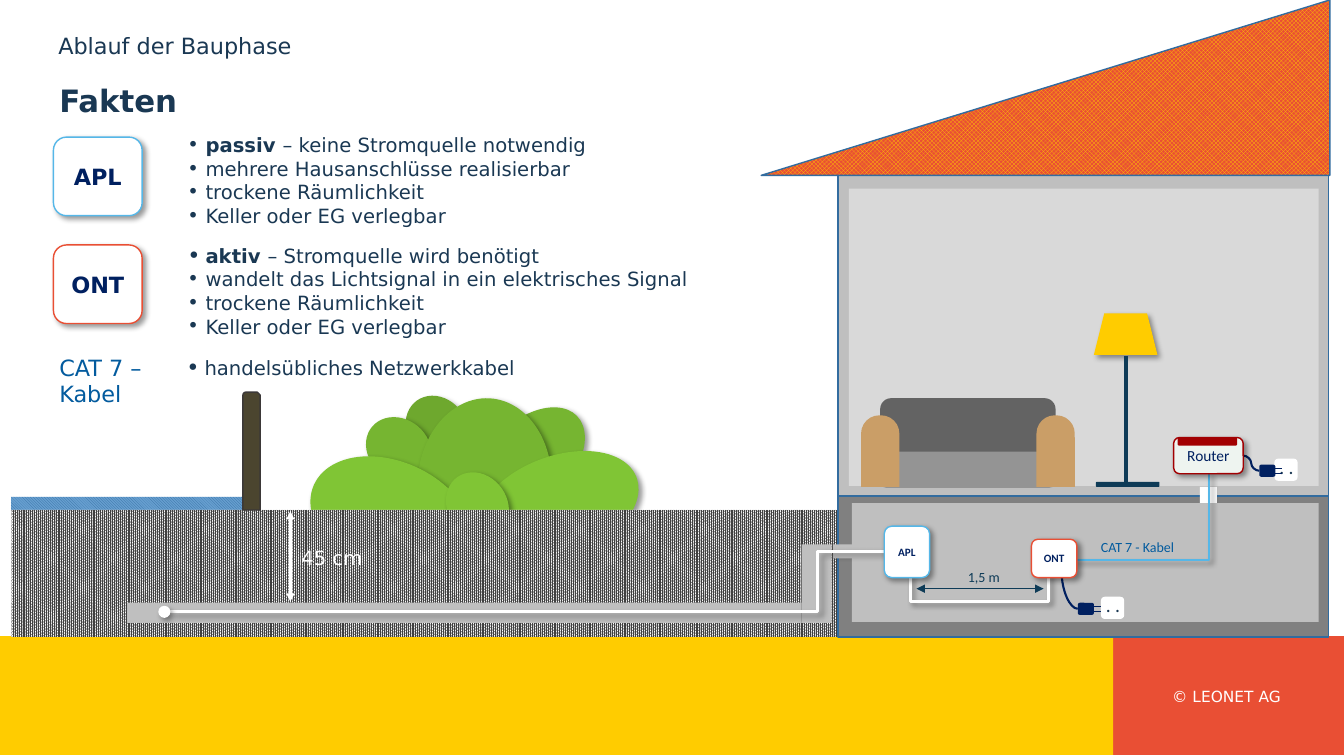
import dataclasses
import lxml.etree
import pptx
import pptx.dml.color
import pptx.enum.dml
import pptx.enum.shapes
import pptx.enum.text
import pptx.oxml.ns
import pptx.util

Kind = pptx.enum.shapes.MSO_SHAPE
Link = pptx.enum.shapes.MSO_CONNECTOR
Weave = pptx.enum.dml.MSO_PATTERN
Fit = pptx.enum.text.MSO_AUTO_SIZE
Anchor = pptx.enum.text.MSO_ANCHOR
Align = pptx.enum.text.PP_ALIGN
RECT, OVAL, ROUND = Kind.RECTANGLE, Kind.OVAL, Kind.ROUNDED_RECTANGLE
ARM = Kind.ROUND_2_SAME_RECTANGLE


@dataclasses.dataclass
class Theme:
    ink: dict
    weave: dict
    size: dict
    sans: str = "DejaVu Sans"
    small: str = "Calibri"


theme = Theme(
    ink=dict(white="FFFFFF", black="000000", red="E94F34", yellow="FFCC00", text="1A3853",
             navy="002060", steel="0E3B57", blue="326C9F", sky="55B7E8", link="035B9E",
             leaf1="6EA82E", leaf2="76B531", leaf3="80C535", wall="BFBFBF", stone="808080",
             room="D9D9D9", bark="4B452F", edge="3B3838", wine="A20002", mint="EEF4F0",
             back="636363", seat="949494", tan="CA9E67", pool="669ECF", soil="404040"),
    weave=dict(water=(Weave.DARK_DOWNWARD_DIAGONAL, "blue", "pool"),
               earth=(Weave.PERCENT_90, "soil", "white"),
               tiles=(Weave.TRELLIS, "yellow", "red")),
    size=dict(title=22, head=16, body=14, foot=11, note=10, tag=8))

COLS, ROWS = 1333, 750
WIDE, HIGH = 13.33, 7.5

SOCKETS = [(1092, 592), (1264, 455)]
PLUGS = [(1069, 598), (1249, 461)]

GARDEN = [
    (RECT, "red", (1104, 631, 229, 118), {}),
    (RECT, "yellow", (0, 631, 1104, 118), {}),
    (RECT, "water", (11, 493, 230, 14), {}),
]
BUSH = [
    ("leaf1", (399, 396, 69, 59), 54.8),
    ("leaf2", (458, 418, 133, 82), 135.8),
    ("leaf2", (361, 416, 69, 59), 40),
    ("leaf2", (396, 413, 169, 133), 93.8),
    ("leaf3", (304, 458, 169, 115), 24.1),
    ("leaf3", (468, 453, 169, 102), 158.6),
    ("leaf3", (439, 472, 69, 59), 54.8),
]
HOUSE = [
    (RECT, "earth", (11, 506, 821, 126), {}),
    (RECT, "stone", (831, 492, 487, 140), dict(line="blue")),
    (RECT, "wall", (831, 172, 487, 320), dict(line="blue")),
    (Kind.RIGHT_TRIANGLE, "tiles", (755, 0, 564, 174), dict(line="blue", flip=True)),
    (Kind.SNIP_ROUND_RECTANGLE, "bark", (241, 389, 17, 117), dict(line="edge")),
    (RECT, "wall", (795, 540, 30, 78), {}),
    (RECT, "wall", (126, 598, 669, 20), {}),
    (RECT, "room", (842, 187, 466, 295), {}),
    (RECT, "wall", (845, 499, 463, 118), {}),
    (Kind.TRAPEZOID, "yellow", (1085, 311, 63, 41), dict(shade=True)),
    (ROUND, "steel", (1087, 478, 63, 5), {}),
    (RECT, "wall", (826, 540, 20, 14), {}),
    (RECT, "white", (1190, 483, 17, 16), {}),
    (ROUND, "back", (873, 395, 174, 65), {}),
    (ROUND, "seat", (873, 448, 174, 36), {}),
    (ARM, "tan", (854, 412, 38, 71), dict(adj=0.476)),
    (ARM, "tan", (1028, 412, 38, 71), dict(adj=0.476)),
]
LINES = [
    (Link.STRAIGHT, "white", 2, (288, 507, 288, 597), dict(tips=True)),
    (Link.STRAIGHT, "steel", 3, (1117, 353, 1117, 478), {}),
    (Link.ELBOW, "white", 2, (169, 607, 877, 547), dict(shade=True, adj=90700)),
    (Link.STRAIGHT, "steel", 1, (909, 584, 1035, 584), dict(tips=True)),
    (Link.CURVE, "navy", 1.5, (1069, 604, 1053, 567), dict(form="curvedConnector2")),
    (Link.CURVE, "navy", 1.5, (1233, 452, 1249, 467), {}),
]
CABLES = [
    ("white", 2, [(903, 569), (903, 597), (1040, 597), (1040, 565)]),
    ("sky", 1.5, [(1064, 556), (1199, 556), (1199, 468)]),
]
UNITS = [
    ("APL", "sky", "white", (877, 522, 45, 51), "tag", theme.small, True),
    ("ONT", "red", "white", (1023, 535, 45, 38), "tag", theme.small, True),
    ("Router", "wine", "mint", (1164, 434, 69, 36), "foot", theme.small, False),
    ("APL", "sky", "white", (53, 136, 88, 78), "head", theme.sans, True),
    ("ONT", "red", "white", (53, 243, 88, 78), "head", theme.sans, True),
]
TRIM = [
    (ROUND, "wine", (1168, 434, 59, 8), {}),
    (OVAL, "white", (157, 601, 12, 12), dict(shade=True)),
]
LABELS = [
    ("© LEONET AG", (1151, 677, 131, 29), "foot", theme.sans, "white", dict(align=Align.CENTER)),
    ("Fakten", (49, 76, 1150, 51), "title", theme.sans, "text", dict(bold=True, mid=True)),
    ("Ablauf der Bauphase", (48, 27, 998, 47), "head", theme.sans, "text", {}),
    ("45 cm", (289, 537, 84, 34), "body", theme.sans, "white", {}),
    ("1,5 m", (950, 559, 52, 27), "note", theme.small, "steel", {}),
    ("CAT 7 - Kabel", (1082, 529, 95, 27), "note", theme.small, "link", {}),
    ("CAT 7 –\vKabel", (49, 346, 116, 64), "head", theme.sans, "link", {}),
]
FACTS = [
    ((176, 127, 422, 104), 100, [
        ("passiv ", "– keine Stromquelle notwendig"), ("", "mehrere Hausanschlüsse realisierbar"),
        ("", "trockene Räumlichkeit"), ("", "Keller oder EG verlegbar")]),
    ((176, 237, 519, 104), 114, [
        ("aktiv ", "– Stromquelle wird benötigt"),
        ("", "wandelt das Lichtsignal in ein elektrisches Signal"),
        ("", "trockene Räumlichkeit"), ("", "Keller oder EG verlegbar")]),
    ((175, 348, 349, 34), 114, [("", "handelsübliches Netzwerkkabel")]),
]

deck = pptx.Presentation()
deck.slide_width = pptx.util.Inches(WIDE)
deck.slide_height = pptx.util.Inches(HIGH)
page = deck.slides.add_slide(deck.slide_layouts[6]).shapes


def place(at):
    steps = (deck.slide_width / COLS, deck.slide_height / ROWS)
    return [round(n * steps[i % 2]) for i, n in enumerate(at)]


def tint(name):
    return pptx.dml.color.RGBColor.from_string(theme.ink[name])


def add(parent, tag, **attrs):
    node = lxml.etree.SubElement(parent, pptx.oxml.ns.qn("a:" + tag))
    for key, val in attrs.items():
        node.set(key, str(val))
    return node


def effect(item, shade):
    group = add(item._element.spPr, "effectLst")
    if shade:
        cast = add(group, "outerShdw", blurRad=pptx.util.Pt(4), dist=pptx.util.Pt(3),
                   dir=45 * 60000, algn="tl", rotWithShape=0)
        add(add(cast, "srgbClr", val=theme.ink["black"]), "alpha", val=40000)


def stroke(item, color, width):
    item.line.color.rgb = tint(color)
    item.line.width = pptx.util.Pt(width)


def box(kind, fill, at, line=None, shade=False, flip=False, adj=None, turn=0):
    item = page.add_shape(kind, *place(at))
    if fill in theme.weave:
        item.fill.patterned()
        item.fill.pattern, fore, back = theme.weave[fill]
        item.fill.fore_color.rgb, item.fill.back_color.rgb = tint(fore), tint(back)
    else:
        item.fill.solid()
        item.fill.fore_color.rgb = tint(fill)
    if line:
        stroke(item, line, 1)
    else:
        item.line.fill.background()
    if flip:
        item._element.spPr.xfrm.set("flipH", "1")
    if adj:
        item.adjustments[0] = adj
    item.rotation = turn
    effect(item, shade)
    return item


def wire(kind, color, width, ends, tips=False, shade=False, adj=None, form=None):
    item = page.add_connector(kind, *place(ends))
    stroke(item, color, width)
    shape = item._element.spPr.find(pptx.oxml.ns.qn("a:prstGeom"))
    if form:
        shape.set("prst", form)
    if adj:
        add(shape[0], "gd", name="adj1", fmla=f"val {adj}")
    if tips:
        for tag in ("headEnd", "tailEnd"):
            add(item.line._get_or_add_ln(), tag, type="triangle")
    effect(item, shade)


def cable(color, width, dots):
    first, *rest = [place(dot) for dot in dots]
    pen = page.build_freeform(*first)
    pen.add_line_segments(rest, close=False)
    item = pen.convert_to_shape()
    item.fill.background()
    stroke(item, color, width)
    effect(item, True)


def style(run, size, face, color, bold=False):
    run.font.size = pptx.util.Pt(theme.size[size])
    run.font.name = face
    run.font.color.rgb = tint(color)
    run.font.bold = bold


def label(words, at, size, face, color, bold=False, align=Align.LEFT, mid=False):
    frame = page.add_textbox(*place(at)).text_frame
    frame.text = words
    frame.word_wrap = mid
    frame.auto_size = Fit.NONE if mid else Fit.SHAPE_TO_FIT_TEXT
    frame.vertical_anchor = Anchor.MIDDLE if mid else Anchor.TOP
    para = frame.paragraphs[0]
    para.alignment = align
    if mid:
        para.line_spacing = 0.9
    for run in para.runs:
        style(run, size, face, color, bold)


def unit(words, line, fill, at, size, face, bold):
    frame = box(ROUND, fill, at, line=line, shade=True).text_frame
    frame.text = words
    frame.word_wrap = False
    frame.vertical_anchor = Anchor.MIDDLE
    frame.paragraphs[0].alignment = Align.CENTER
    style(frame.paragraphs[0].runs[0], size, face, "navy", bold)


def facts(at, scale, rows):
    frame = page.add_textbox(*place(at)).text_frame
    frame.word_wrap = False
    frame.auto_size = Fit.SHAPE_TO_FIT_TEXT
    hang = pptx.util.Inches(0.18)
    for i, row in enumerate(rows):
        para = frame.add_paragraph() if i else frame.paragraphs[0]
        props = para._p.get_or_add_pPr()
        props.set("marL", str(hang))
        props.set("indent", str(-hang))
        add(props, "buSzPct", val=(100 if i else scale) * 1000)
        add(props, "buFont", typeface=theme.sans)
        add(props, "buChar", char="•")
        for words, bold in zip(row, (True, False)):
            if words:
                run = para.add_run()
                run.text = words
                style(run, "body", theme.sans, "text", bold)


for kind, fill, at, more in GARDEN:
    box(kind, fill, at, **more)
for fill, at, turn in BUSH:
    box(OVAL, fill, at, shade=True, turn=turn)
for kind, fill, at, more in HOUSE:
    box(kind, fill, at, **more)
for x, y in SOCKETS:
    box(ROUND, "white", (x, y, 23, 22))
    label(". .", (x - 5, y - 9, 34, 34), "body", theme.small, "text")
for x, y in PLUGS:
    box(ROUND, "navy", (x, y, 16, 12))
    for drop in (4, 9):
        wire(Link.STRAIGHT, "navy", 0.75, (x + 12, y + drop, x + 23, y + drop))
for kind, color, width, ends, more in LINES:
    wire(kind, color, width, ends, **more)
for row in CABLES:
    cable(*row)
for row in UNITS:
    unit(*row)
for kind, fill, at, more in TRIM:
    box(kind, fill, at, **more)
for *row, more in LABELS:
    label(*row, **more)
for row in FACTS:
    facts(*row)

deck.save("out.pptx")
